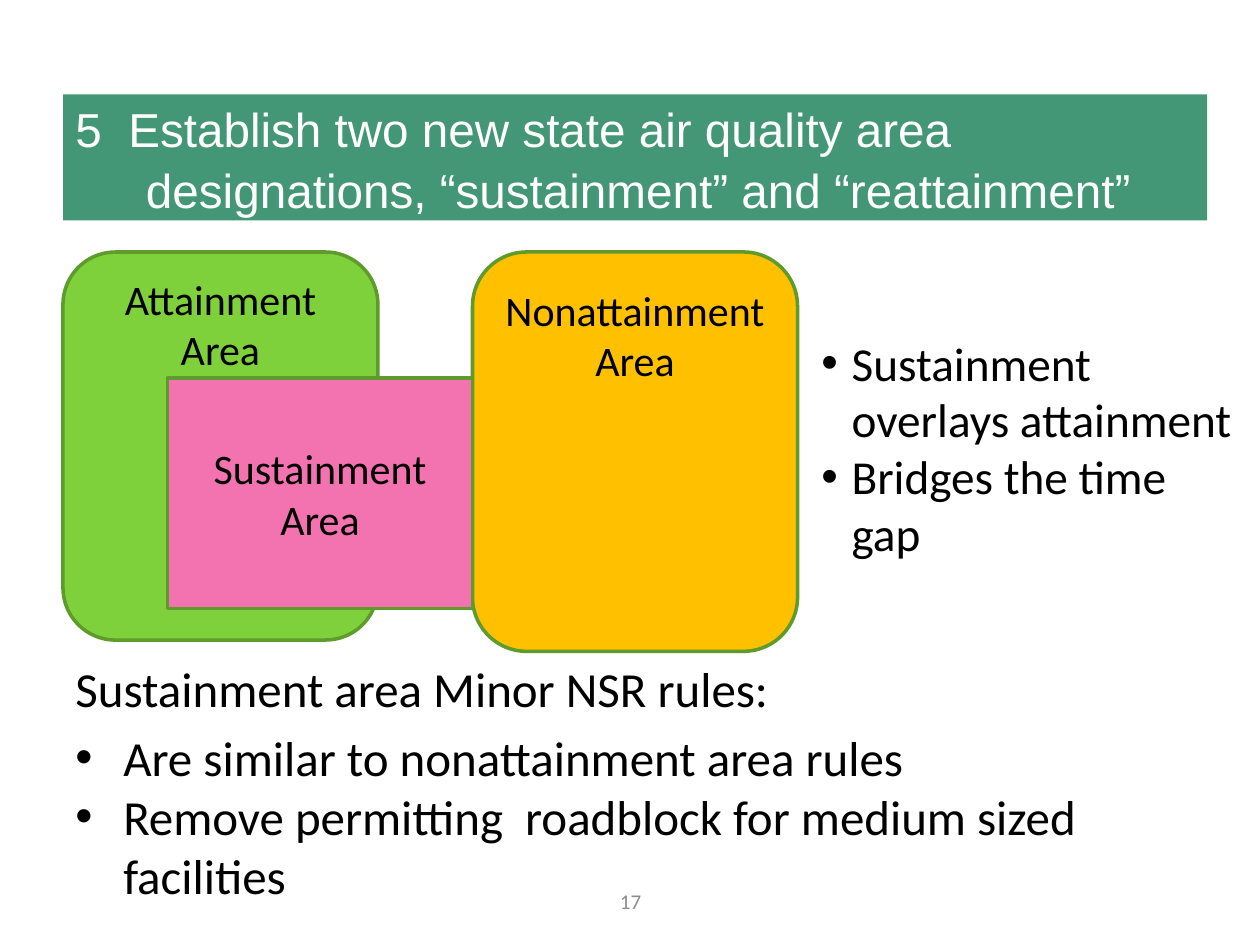
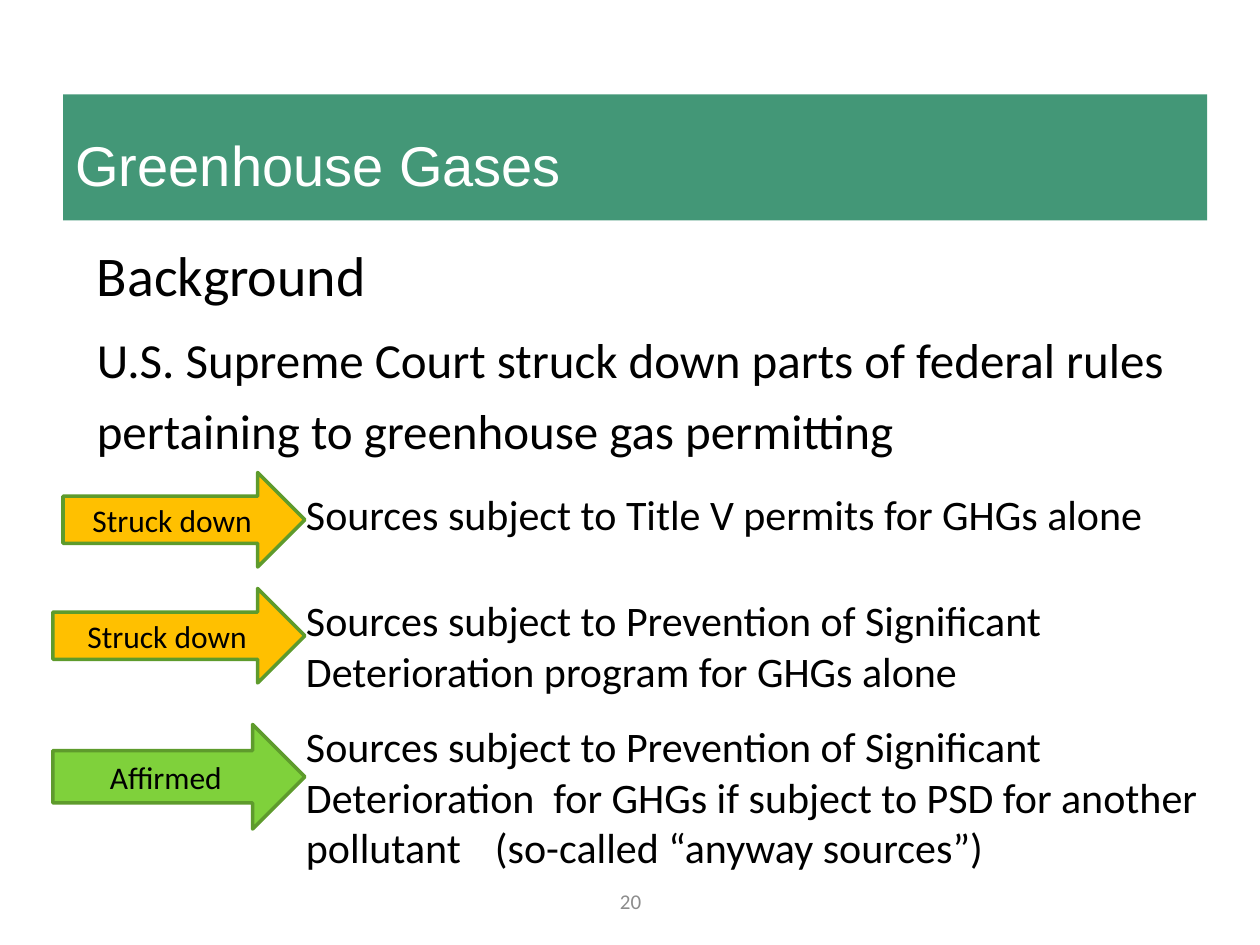
from lxml import etree
from pptx import Presentation
from pptx.dml.color import RGBColor
from pptx.enum.shapes import MSO_SHAPE
from pptx.enum.text import MSO_ANCHOR, PP_ALIGN
from pptx.oxml.ns import qn
from pptx.util import Inches, Pt

RECTANGLE = MSO_SHAPE.RECTANGLE
ROUNDED = MSO_SHAPE.ROUNDED_RECTANGLE
ARROW = MSO_SHAPE.RIGHT_ARROW
TOP, MIDDLE = MSO_ANCHOR.TOP, MSO_ANCHOR.MIDDLE
LEFT, CENTER = PP_ALIGN.LEFT, PP_ALIGN.CENTER

TEAL, GREEN, AMBER, PINK = "439777", "7FD13B", "FFC000", "F273AF"
OUTLINE, BLACK, WHITE, GRAY = "5E9B2C", "000000", "FFFFFF", "8C8C8C"


def add_box(shapes, area, kind=None, fill=None, line=None, anchor=TOP):
    """Add a preset shape, or a text box when kind is None; return its text frame."""
    place = [Inches(length) for length in area]
    if kind is None:
        box = shapes.add_textbox(*place)
    else:
        box = shapes.add_shape(kind, *place)
        box.shadow.inherit = False
        box.fill.solid()
        box.fill.fore_color.rgb = RGBColor.from_string(fill)
        if line:
            box.line.color.rgb = RGBColor.from_string(line)
            box.line.width = Pt(2)
        else:
            box.line.fill.background()
    frame = box.text_frame
    frame.word_wrap = True
    frame.vertical_anchor = anchor
    return frame


def write(frame, text, size, color=BLACK, font="Calibri", align=LEFT, spacing=1.0,
          after=0, margin=0, hanging=0, bullet=False, tab=None):
    """Write one paragraph, filling the frame's empty first one before adding more."""
    paragraph = frame.paragraphs[0]
    if paragraph.text:
        paragraph = frame.add_paragraph()
    paragraph.text = text
    paragraph.alignment = align
    paragraph.line_spacing = spacing
    paragraph.space_after = Pt(after)
    properties = paragraph._p.get_or_add_pPr()
    properties.set("marL", str(Inches(margin)))
    properties.set("indent", str(-Inches(hanging)))
    if bullet:
        etree.SubElement(properties, qn("a:buFont"), typeface="Arial")
        etree.SubElement(properties, qn("a:buChar"), char="•")
    if tab:
        stops = etree.SubElement(properties, qn("a:tabLst"))
        etree.SubElement(stops, qn("a:tab"), pos=str(Inches(tab)), algn="l")
    paragraph.font.size = Pt(size)
    paragraph.font.name = font
    paragraph.font.color.rgb = RGBColor.from_string(color)


presentation = Presentation()
presentation.slide_width = Inches(10)
presentation.slide_height = Inches(7.5)

# Title band and page number on every slide: title, size, line spacing, hanging, page
pages = [
    ("5  Establish two new state air quality area designations, "
     "“sustainment” and “reattainment”", 27.2, 1.06, 0.56, "17"),
    ("Greenhouse Gases", 32, 1.2, 0, "20"),
]
for title, size, spacing, hanging, number in pages:
    slide = presentation.slides.add_slide(presentation.slide_layouts[6])
    band = add_box(slide.shapes, (0.5, 0.75, 9.08, 1), RECTANGLE, TEAL, anchor=MIDDLE)
    write(band, title, size, WHITE, "Arial", spacing=spacing, after=6,
          margin=hanging, hanging=hanging)
    footer = add_box(slide.shapes, (3.42, 6.95, 3.17, 0.4), anchor=MIDDLE)
    write(footer, number, 12, GRAY, align=CENTER)

designations, greenhouse = presentation.slides

# Slide 1: overlapping area designations
areas = [
    ("Attainment Area", (0.5, 2, 2.5, 3.08), ROUNDED, GREEN, TOP, 0.05),
    ("Nonattainment Area", (3.75, 2, 2.58, 3.17), ROUNDED, AMBER, TOP, 0.13),
    ("Sustainment Area", (1.33, 3, 2.42, 1.83), RECTANGLE, PINK, MIDDLE, 0.05),
]
for label, area, kind, fill, anchor, inset in areas:
    frame = add_box(designations.shapes, area, kind, fill, OUTLINE, anchor)
    frame.margin_top = Inches(inset)
    write(frame, label, 24, align=CENTER)

benefits = add_box(designations.shapes, (6.42, 2.6, 3.58, 2.2))
for benefit in ("Sustainment\voverlays attainment", "Bridges the time\vgap"):
    write(benefits, benefit, 27, margin=0.24, hanging=0.24, bullet=True)

rules = add_box(designations.shapes, (0, 5.08, 9.75, 1.92))
write(rules, "Sustainment area Minor NSR rules:", 28, spacing=1.2, after=6,
      margin=1.31, hanging=0.81)
for rule in ("Are similar to nonattainment area rules",
             "Remove permitting  roadblock for medium sized facilities"):
    write(rules, rule, 28, margin=0.88, hanging=0.38, bullet=True)

# Slide 2: court rulings on greenhouse gas permitting
background = add_box(greenhouse.shapes, (0.67, 1.75, 9.33, 2))
write(background, "Background", 32, spacing=1.2, after=6)
write(background, "U.S. Supreme Court struck down parts of federal rules pertaining "
      "to greenhouse gas permitting", 28, spacing=1.2, after=6)

# Verdict, arrow area, colour, ruling, top and height of the ruling
rulings = [
    ("Struck down", (0.5, 3.75, 1.92, 0.75), AMBER,
     "Sources subject to Title V permits for GHGs alone", 3.83, 0.5),
    ("Struck down", (0.42, 4.67, 2, 0.75), AMBER,
     "Sources subject to Prevention of Significant Deterioration program "
     "for GHGs alone", 4.67, 0.91),
    ("Affirmed", (0.42, 5.75, 2, 0.83), GREEN,
     "Sources subject to Prevention of Significant Deterioration  for GHGs if "
     "subject to PSD for another pollutant\t(so-called “anyway sources”)", 5.67, 1.31),
]
for verdict, area, fill, ruling, top, height in rulings:
    group = greenhouse.shapes.add_group_shape()
    write(add_box(group.shapes, (2.33, top, 7.42, height)), ruling, 24, tab=1.61)
    arrow = add_box(group.shapes, area, ARROW, fill, OUTLINE, MIDDLE)
    write(arrow, verdict, 18, align=CENTER)

presentation.save("out.pptx")
